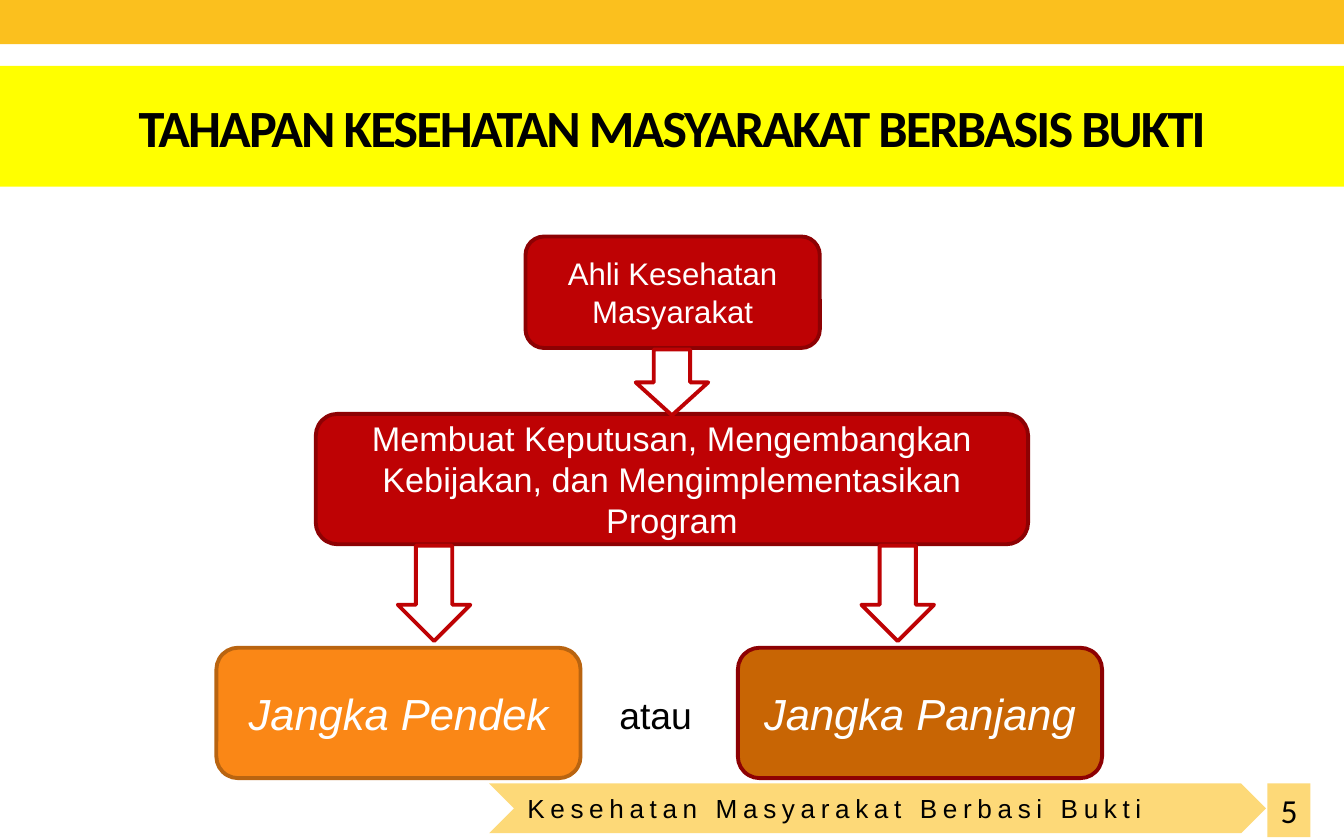
"""Build the slide on the stages of evidence-based public health."""
from lxml import etree
from pptx import Presentation
from pptx.dml.color import RGBColor
from pptx.enum.shapes import MSO_SHAPE
from pptx.enum.text import MSO_ANCHOR, PP_ALIGN
from pptx.util import Inches, Pt

RECT = MSO_SHAPE.RECTANGLE
ROUNDED = MSO_SHAPE.ROUNDED_RECTANGLE
ARROW = MSO_SHAPE.DOWN_ARROW
CHEVRON = MSO_SHAPE.CHEVRON
TOP, MIDDLE = MSO_ANCHOR.TOP, MSO_ANCHOR.MIDDLE
LEFT, CENTER, JUSTIFY = PP_ALIGN.LEFT, PP_ALIGN.CENTER, PP_ALIGN.JUSTIFY

BLACK = RGBColor(0x00, 0x00, 0x00)
WHITE = RGBColor(0xFF, 0xFF, 0xFF)
GOLD = RGBColor(0xFB, 0xC0, 0x1E)
PALE_GOLD = RGBColor(0xFD, 0xD9, 0x78)
YELLOW = RGBColor(0xFF, 0xFF, 0x00)
RED = RGBColor(0xBE, 0x02, 0x04)
DARK_RED = RGBColor(0x8D, 0x01, 0x03)
ORANGE = RGBColor(0xFA, 0x87, 0x16)
DARK_ORANGE = RGBColor(0xB9, 0x64, 0x10)
BROWN = RGBColor(0xC8, 0x65, 0x04)

LINE_WIDTH = Pt(2.08)


def add_shape(s, kind, box, fill, line=None):
    sp = s.shapes.add_shape(kind, *map(Inches, box))
    sp.shadow.inherit = False
    sp.fill.solid()
    sp.fill.fore_color.rgb = fill
    if line is None:
        sp.line.fill.background()
    else:
        sp.line.color.rgb = line
        sp.line.width = LINE_WIDTH
    return sp


def set_text(sp, text, size, color=BLACK, font="Arial", align=CENTER,
             anchor=MIDDLE, bold=False, italic=False, spacing=0, wrap=True):
    tf = sp.text_frame
    tf.word_wrap = wrap
    tf.vertical_anchor = anchor
    p = tf.paragraphs[0]
    p.alignment = align
    p.font.name, p.font.size = font, Pt(size)
    p.font.bold, p.font.italic = bold, italic
    p.font.color.rgb = color
    r = p.add_run()
    r.text = text
    if spacing:
        r_pr = r.font._element if hasattr(r.font, "_element") else r._r.get_or_add_rPr()
        r_pr.set("spc", str(spacing * 100))


def add_box(s, box, text, size, fill, line, italic=False):
    sp = add_shape(s, ROUNDED, box, fill, line)
    set_text(sp, text, size, WHITE, italic=italic)


def add_arrow(s, left, top, height):
    add_shape(s, ARROW, (left, top, 0.54, height), WHITE, RED)


def add_label(s, box, text, size):
    sp = s.shapes.add_textbox(*map(Inches, box))
    set_text(sp, text, size, align=LEFT, anchor=TOP, wrap=False)


def add_header(s):
    add_shape(s, RECT, (0, 0, 10, 0.33), GOLD)
    sp = add_shape(s, RECT, (0, 0.49, 10, 0.9), YELLOW)
    set_text(sp, "TAHAPAN KESEHATAN MASYARAKAT BERBASIS BUKTI", 28,
             font="Calibri", bold=True, spacing=-1)


def add_footer(s):
    sp = add_shape(s, RECT, (9.43, 5.83, 0.32, 0.4), PALE_GOLD)
    set_text(sp, "5", 18, font="Calibri", align=LEFT, anchor=TOP)
    sp = add_shape(s, CHEVRON, (3.64, 5.83, 5.78, 0.37), PALE_GOLD)
    set_text(sp, "Kesehatan Masyarakat Berbasi Bukti", 14, align=JUSTIFY, spacing=3)


def add_flow(s):
    add_box(s, (3.91, 1.76, 2.19, 0.83), "Ahli Kesehatan Masyarakat",
            16.7, RED, DARK_RED)
    add_box(s, (2.35, 3.08, 5.3, 0.97),
            "Membuat Keputusan, Mengembangkan Kebijakan, "
            "dan Mengimplementasikan Program", 18.3, RED, DARK_RED)
    for left, text, fill, line in (
        (1.61, "Jangka Pendek", ORANGE, DARK_ORANGE),
        (5.49, "Jangka Panjang", BROWN, DARK_RED),
    ):
        add_box(s, (left, 4.82, 2.71, 0.97), text, 23.3, fill, line, italic=True)
    add_label(s, (4.51, 5.1, 0.75, 0.44), "atau", 20)
    add_arrow(s, 4.73, 2.6, 0.49)
    for left in (2.96, 6.41):
        add_arrow(s, left, 4.06, 0.71)


def main():
    prs = Presentation()
    prs.slide_width, prs.slide_height = Inches(10), Inches(6.25)
    s = prs.slides.add_slide(prs.slide_layouts[6])
    add_header(s)
    add_flow(s)
    add_footer(s)
    prs.save("out.pptx")


if __name__ == "__main__":
    main()
